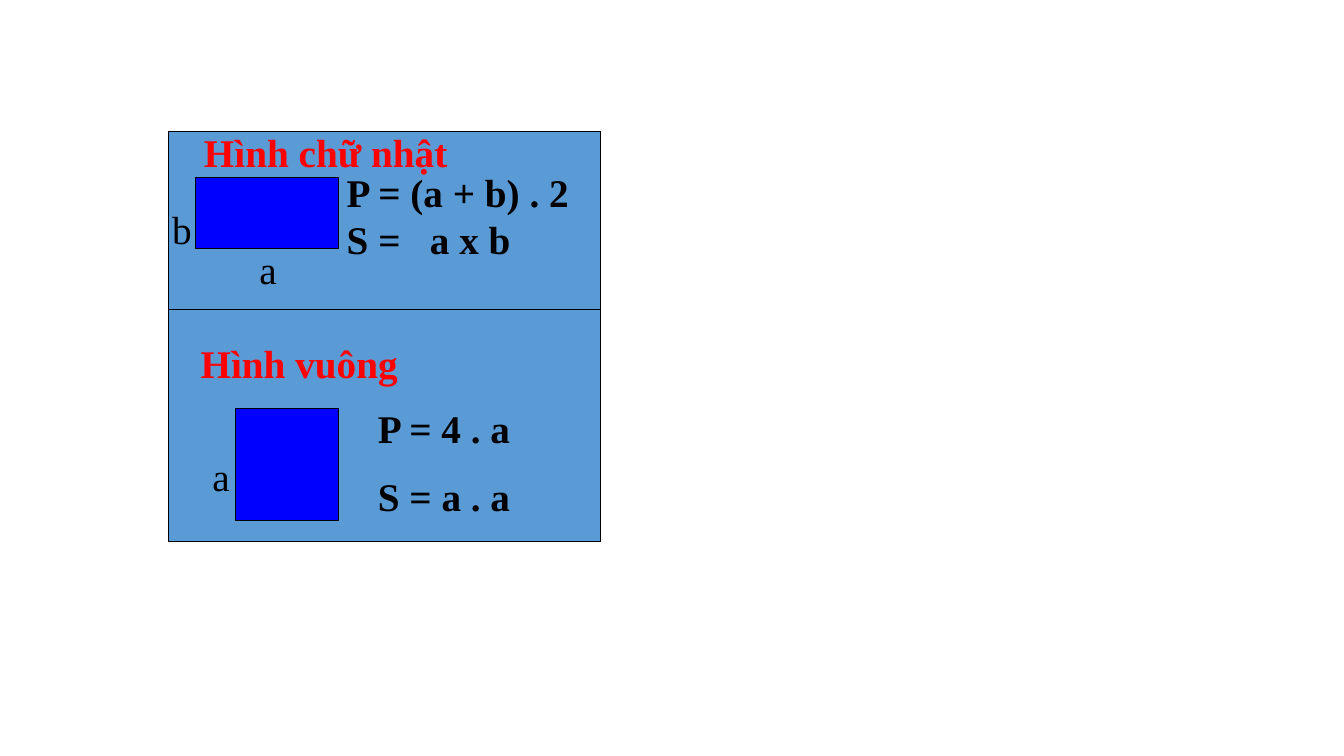
from pptx import Presentation, util as u
from pptx.dml.color import RGBColor
from pptx.enum import shapes, text
from lxml import etree

theme = {
    "panel": RGBColor(0x5B, 0x9B, 0xD5),
    "figure": RGBColor(0, 0, 0xFF),
    "ink": RGBColor(0, 0, 0),
    "title": RGBColor(0xFF, 0, 0),
    "font": "Times New Roman",
    "size": u.Pt(33.6),
    "line": u.Pt(0.75),
    "gap": u.Pt(18),
}

deck = Presentation()
deck.slide_width, deck.slide_height = u.Inches(16), u.Inches(9)
slide = deck.slides.add_slide(deck.slide_layouts[6])
col, row = deck.slide_width / 16, deck.slide_height / 9


def box(host, fill, x, y, w, h):
    rect = host.add_shape(shapes.MSO_SHAPE.RECTANGLE,
                          int(x * col), int(y * row), int(w * col), int(h * row))
    rect.shadow.inherit = False
    rect.fill.solid()
    rect.fill.fore_color.rgb = theme[fill]
    rect.line.color.rgb = theme["ink"]
    rect.line.width = theme["line"]


def label(host, lines, x, y, w, h, color="ink", bold=False, gap=0):
    frame = host.add_textbox(int(x * col), int(y * row), int(w * col), int(h * row)).text_frame
    frame.word_wrap = True
    frame.auto_size = text.MSO_AUTO_SIZE.SHAPE_TO_FIT_TEXT
    frame.text = "\n".join(lines)
    for para in frame.paragraphs:
        para.font.name = theme["font"]
        para.font.size = theme["size"]
        para.font.bold = bold
        para.font.color.rgb = theme[color]
    for para in frame.paragraphs[1:]:
        para.space_before = gap
    return frame


left, wide, mid, tall = 2, 5.15, 3.68, 0.67

oblong = slide.shapes
box(oblong, "panel", left, 1.57, wide, mid - 1.57)
box(oblong, "figure", 2.33, 2.11, 1.7, 0.85)
rules = label(oblong, ["P = (a + b) . 2", "S =\ta x b"], 4.03, 1.95, 3.17, 1.23, bold=True)
props = rules.paragraphs[1]._p.get_or_add_pPr()
space = "{http://schemas.openxmlformats.org/drawingml/2006/main}"
tabs = etree.Element(space + "tabLst")
etree.SubElement(tabs, space + "tab", pos=str(u.Inches(0.99)), algn="l")
spot = props.find(space + "defRPr")
if spot is None:
    props.append(tabs)
else:
    spot.addprevious(tabs)
label(oblong, ["a"], 2.99, 2.87, 0.66, tall)
label(oblong, ["b"], 1.95, 2.4, 0.47, tall)

square = slide.shapes.add_group_shape().shapes
box(square, "panel", left, mid, wide, 2.77)
box(square, "figure", 2.8, 4.86, 1.23, 1.34)
label(square, ["a"], 2.43, 5.33, 0.57, tall)
label(square, ["Hình vuông"], 2.29, 3.99, 2.81, tall, "title", True)
label(square, ["P = 4 . a", "S = a . a"], 4.4, 4.76, 2.2, 1.51, bold=True, gap=theme["gap"])

label(oblong, ["Hình chữ nhật"], 2.33, 1.48, 3.21, tall, "title", True)

deck.save("out.pptx")
